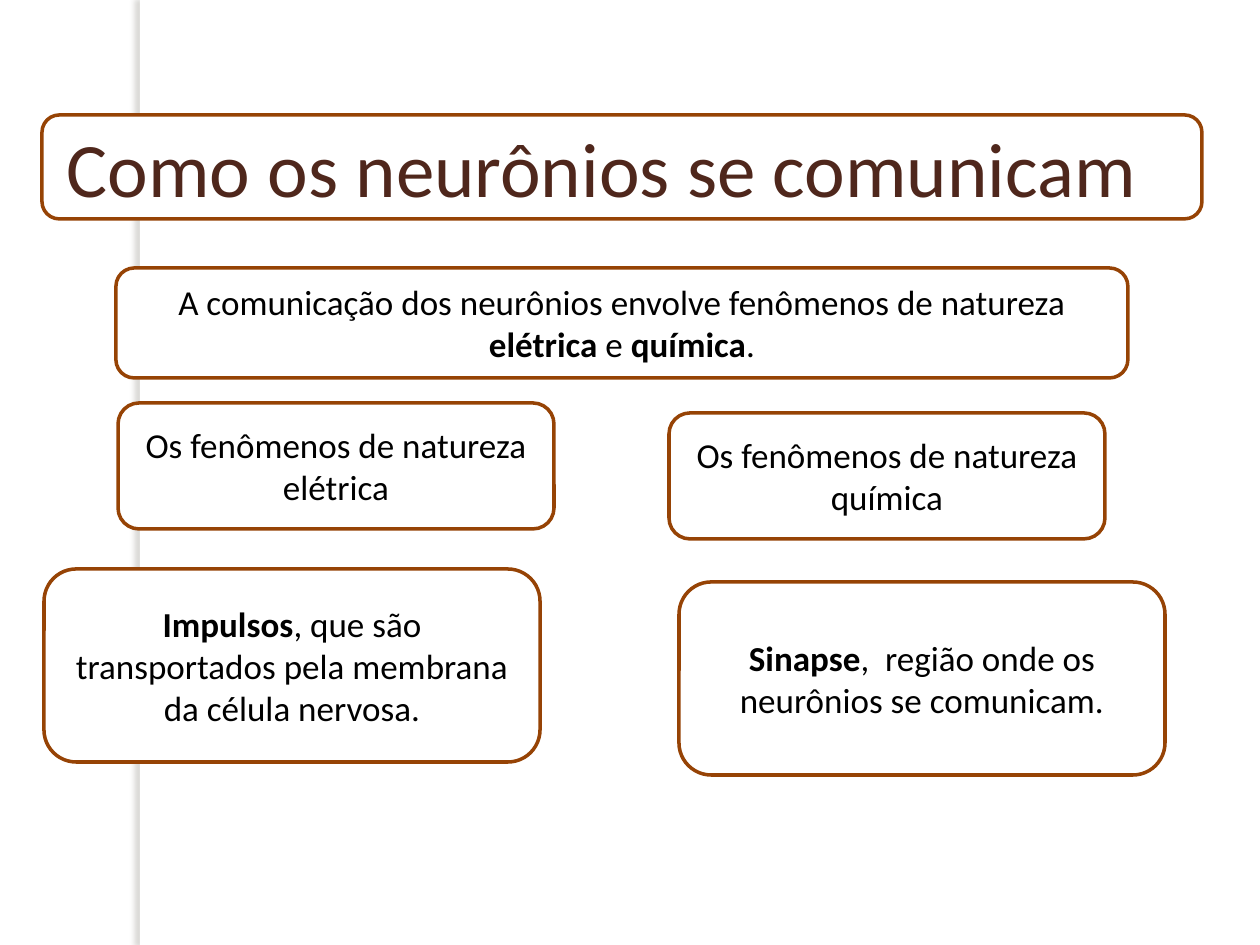
from lxml import etree
from pptx import Presentation
from pptx.dml.color import RGBColor
from pptx.enum.shapes import MSO_SHAPE
from pptx.enum.text import MSO_ANCHOR, MSO_AUTO_SIZE, PP_ALIGN
from pptx.oxml.ns import qn
from pptx.util import Pt

RECT, ROUND = MSO_SHAPE.RECTANGLE, MSO_SHAPE.ROUNDED_RECTANGLE
MIDDLE, CENTER = MSO_ANCHOR.MIDDLE, PP_ALIGN.CENTER
FIXED = MSO_AUTO_SIZE.NONE
PX = 914400 // 126
TITLE_ONLY = 5


def tint(code):
    return RGBColor.from_string(code)


def write(shape, text, size=20, color="000000", font="Calibri", right=13):
    """Fill a shape with centred text; words between asterisks are bold."""
    frame = shape.text_frame
    frame.word_wrap = True
    frame.auto_size = FIXED
    frame.vertical_anchor = MIDDLE
    frame.margin_left, frame.margin_right = 13 * PX, right * PX
    para = frame.paragraphs[0]
    para.alignment = CENTER
    for i, part in enumerate(text.split("*")):
        if part:
            run = para.add_run()
            run.text = part
            run.font.name, run.font.size = font, Pt(size)
            run.font.bold = i % 2 == 1
            run.font.color.rgb = tint(color)


class Deck:
    """Holds the style and the current slide."""
    fill, edge, head, shade = "FFFFFF", "964305", "4F271C", "736F63"

    def __init__(self, wide, high):
        self.show = Presentation()
        self.show.slide_width, self.show.slide_height = wide * PX, high * PX
        self.slide = self.show.slides.add_slide(self.show.slide_layouts[TITLE_ONLY])

    def shape(self, kind, area):
        item = self.slide.shapes.add_shape(kind, *(n * PX for n in area))
        item.shadow.inherit = False
        item.fill.solid()
        item.fill.fore_color.rgb = tint(self.fill)
        return item

    def strip(self, *area):
        """Draw a plain band with a soft shadow on its left."""
        band = self.shape(RECT, area)
        band.line.fill.background()
        effects = band.element.spPr.find(qn("a:effectLst"))
        cast = etree.SubElement(effects, qn("a:outerShdw"), blurRad=str(Pt(3)),
                                dist=str(Pt(3)), dir="10800000", rotWithShape="0")
        color = etree.SubElement(cast, qn("a:srgbClr"), val=self.shade)
        etree.SubElement(color, qn("a:alpha"), val="25000")

    def box(self, *area, text=""):
        item = self.shape(ROUND, area)
        item.line.color.rgb = tint(self.edge)
        item.line.width = Pt(2)
        if text:
            write(item, text)

    def title(self, *area, text):
        """Set the title placeholder on top of a rounded box."""
        self.box(*area)
        item = self.slide.shapes.title
        item.left, item.top, item.width, item.height = (n * PX for n in area)
        self.slide.shapes.element.append(item.element)
        write(item, text, size=44, color=self.head, right=53)


def main():
    deck = Deck(1260, 945)
    deck.strip(140, 0, 10, 945)
    deck.title(42, 115, 1160, 104, text="Como os neurônios se comunicam")
    deck.box(116, 268, 1012, 110,
             text="A comunicação dos neurônios envolve fenômenos de natureza "
                  "*elétrica* e *química*.")
    for left, top, word in ((118, 403, "elétrica"), (669, 413, "química")):
        deck.box(left, top, 436, 126, text=f"Os fenômenos de natureza {word}")
    deck.box(44, 569, 496, 193,
             text="*Impulsos*, que são transportados pela membrana da célula nervosa.")
    deck.box(679, 582, 486, 193,
             text="*Sinapse*,  região onde os neurônios se comunicam.")
    deck.show.save("out.pptx")


if __name__ == "__main__":
    main()
